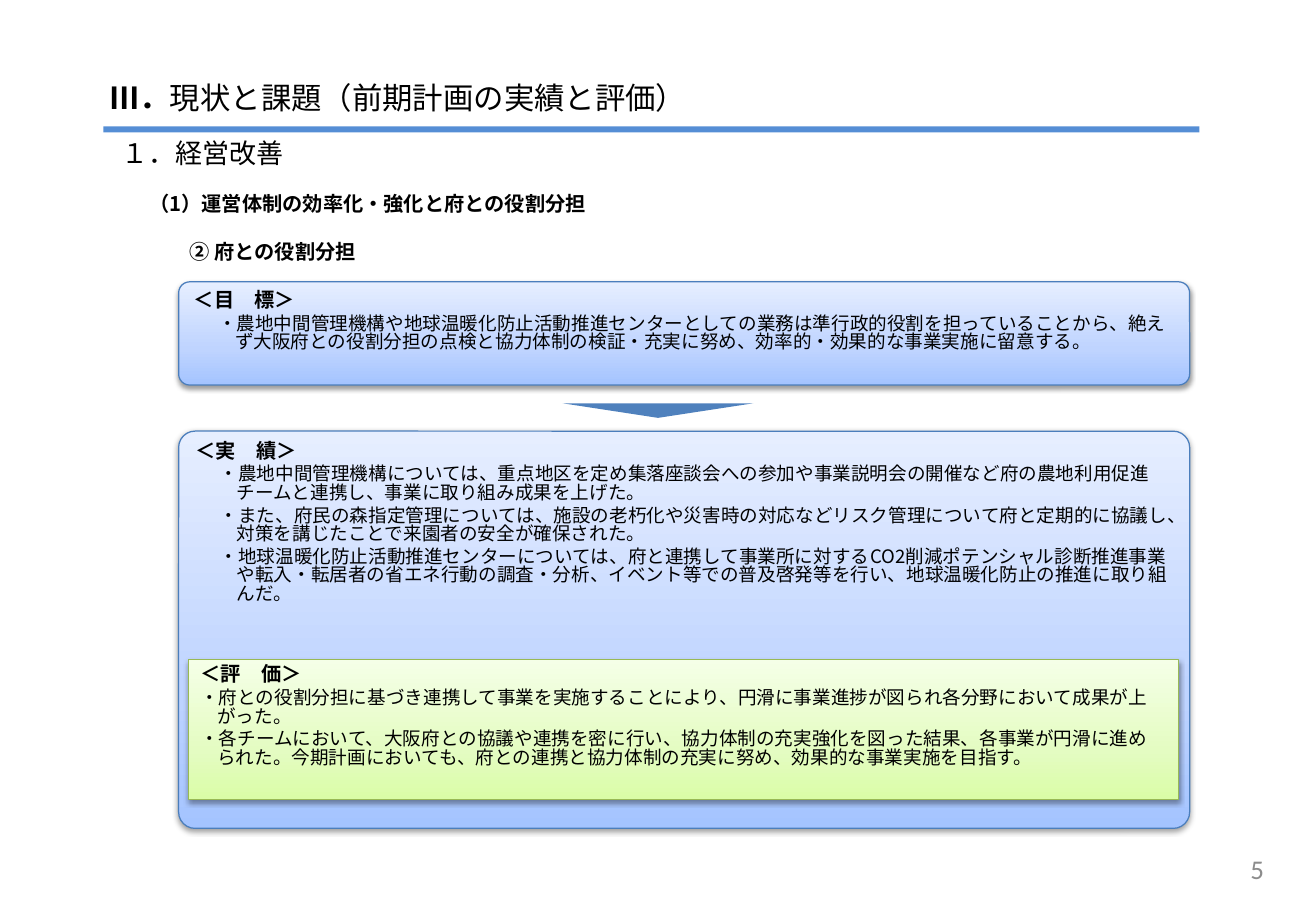
from lxml import etree
from pptx import Presentation
from pptx.dml.color import RGBColor
from pptx.enum.lang import MSO_LANGUAGE_ID
from pptx.enum.shapes import MSO_SHAPE
from pptx.enum.text import MSO_ANCHOR, PP_ALIGN
from pptx.oxml import parse_xml
from pptx.oxml.ns import qn
from pptx.util import Inches, Pt

RECT, ROUND, WEDGE = MSO_SHAPE.RECTANGLE, MSO_SHAPE.ROUNDED_RECTANGLE, MSO_SHAPE.ISOSCELES_TRIANGLE
TOP, MIDDLE = MSO_ANCHOR.TOP, MSO_ANCHOR.MIDDLE
LEFT, RIGHT = PP_ALIGN.LEFT, PP_ALIGN.RIGHT
JAPANESE = MSO_LANGUAGE_ID.JAPANESE
NS = "http://schemas.openxmlformats.org/drawingml/2006/main"

# Content
TITLE = [("Ⅲ．", True), ("現状と課題（前期計画の実績と評価）", False)]
SECTION = "１．経営改善"
TOPIC = "（1）運営体制の効率化・強化と府との役割分担"
ITEM = "② 府との役割分担"
PAGE = "5"
GOAL = ("＜目　標＞", [
    "・農地中間管理機構や地球温暖化防止活動推進センターとしての業務は準行政的役割を担っていることから、絶えず大阪府との役割分担の点検と協力体制の検証・充実に努め、効率的・効果的な事業実施に留意する。",
])
RESULT = ("＜実　績＞", [
    "・農地中間管理機構については、重点地区を定め集落座談会への参加や事業説明会の開催など府の農地利用促進チームと連携し、事業に取り組み成果を上げた。",
    "・また、府民の森指定管理については、施設の老朽化や災害時の対応などリスク管理について府と定期的に協議し、対策を講じたことで来園者の安全が確保された。",
    "・地球温暖化防止活動推進センターについては、府と連携して事業所に対するCO2削減ポテンシャル診断推進事業や転入・転居者の省エネ行動の調査・分析、イベント等での普及啓発等を行い、地球温暖化防止の推進に取り組んだ。",
])
REVIEW = ("＜評　価＞", [
    "・府との役割分担に基づき連携して事業を実施することにより、円滑に事業進捗が図られ各分野において成果が上がった。",
    "・各チームにおいて、大阪府との協議や連携を密に行い、協力体制の充実強化を図った結果、各事業が円滑に進められた。今期計画においても、府との連携と協力体制の充実に努め、効果的な事業実施を目指す。",
])

# Theme
THEME = {
    "font": "Noto Sans CJK JP", "number": "Calibri",
    "ink": "000000", "grey": "8C8C8C", "rule": "558ED5", "arrow": "4F81BD",
    "title": 18, "section": 16, "head": 12, "body": 11,
    "pitch": 0.84, "gap": 0.2,
    "blue": (("A4C4FF", "BFD4FF", "E6EEFF"), "4B7EBC"),
    "green": (("DAFDA7", "E4FCC2", "F5FFE7"), "98B955"),
}
HANG = 0.14

deck = Presentation()
deck.slide_width, deck.slide_height = Inches(10.83), Inches(7.5)
slide = deck.slides.add_slide(deck.slide_layouts[6])


def place(box):
    return [Inches(v) for v in box]


def write(para, runs, size, color="ink", font="font", pitch=THEME["pitch"]):
    para.line_spacing = pitch
    for text, bold in runs:
        run = para.add_run()
        run.text = text
        face = run.font
        face.size, face.bold = Pt(size), bold
        face.color.rgb = RGBColor.from_string(THEME[color])
        face.name, face.language_id = THEME[font], JAPANESE
        east = etree.SubElement(face._element, qn("a:ea"))
        east.set("typeface", THEME[font])


def label(box, runs, size, indent=0, anchor=TOP, align=LEFT, **style):
    frame = slide.shapes.add_textbox(*place(box)).text_frame
    frame.word_wrap, frame.vertical_anchor = True, anchor
    frame.margin_left = Inches(0.1 + indent)
    para = frame.paragraphs[0]
    para.alignment = align
    write(para, runs, size, **style)


def solid(kind, box, color, turn=0):
    shape = slide.shapes.add_shape(kind, *place(box))
    shape.shadow.inherit = False
    shape.fill.solid()
    shape.fill.fore_color.rgb = RGBColor.from_string(THEME[color])
    shape.line.fill.background()
    shape.rotation = turn


def panel(kind, box, tint, content, left, round_by=None, right=0.1):
    stops, edge = THEME[tint]
    shape = slide.shapes.add_shape(kind, *place(box))
    if round_by:
        shape.adjustments[0] = round_by
    shape.line.color.rgb = RGBColor.from_string(edge)
    shape.line.width = Pt(0.75)

    # Gradient and soft shadow
    marks = "".join(f'<a:gs pos="{pos}"><a:srgbClr val="{color}"/></a:gs>'
                    for pos, color in zip((0, 35000, 100000), stops))
    props = shape._element.spPr
    props.find(qn("a:prstGeom")).addnext(parse_xml(
        f'<a:gradFill xmlns:a="{NS}" rotWithShape="1"><a:gsLst>{marks}</a:gsLst>'
        '<a:lin ang="16200000" scaled="0"/></a:gradFill>'))
    props.append(parse_xml(
        f'<a:effectLst xmlns:a="{NS}"><a:outerShdw blurRad="{Pt(3.1)}" dist="{Pt(1.6)}" '
        'dir="5400000" rotWithShape="0"><a:srgbClr val="000000"><a:alpha val="38000"/>'
        '</a:srgbClr></a:outerShdw></a:effectLst>'))

    # Heading and hanging points
    head, points = content
    frame = shape.text_frame
    frame.word_wrap, frame.vertical_anchor = True, TOP
    frame.margin_right = Inches(right)
    for i, text in enumerate([head] + points):
        para = frame.add_paragraph() if i else frame.paragraphs[0]
        size = THEME["body" if i else "head"]
        para.alignment = LEFT
        para.space_before = Pt(size * THEME["gap"])
        if i:
            ppr = para._p.get_or_add_pPr()
            ppr.set("marL", str(Inches(left)))
            ppr.set("indent", str(Inches(-HANG)))
        write(para, [(text, i == 0)], size)


# Title and rule
label((0.8, 0.53, 5.28, 0.54), TITLE, THEME["title"], anchor=MIDDLE, pitch=1.0)
solid(RECT, (0.85, 1.04, 9.02, 0.05), "rule")

# Section headings
label((0.85, 1.12, 4.11, 0.37), [(SECTION, False)], THEME["section"], indent=0.05)
label((1.13, 1.56, 5.23, 0.3), [(TOPIC, True)], THEME["head"])
label((1.13, 1.95, 5.23, 0.3), [(ITEM, True)], THEME["head"], indent=0.33)

# Goal, arrow, results and review
panel(ROUND, (1.47, 2.32, 8.32, 0.85), "blue", GOAL, 0.34, 0.107)
solid(WEDGE, (4.63, 3.32, 1.57, 0.12), "arrow", 180)
panel(ROUND, (1.47, 3.55, 8.32, 3.27), "blue", RESULT, 0.34, 0.041)
panel(RECT, (1.55, 5.43, 8.15, 1.15), "green", REVIEW, HANG, right=0.13)

# Page number
label((7.97, 6.95, 2.53, 0.4), [(PAGE, False)], 16, anchor=MIDDLE, align=RIGHT,
      color="grey", font="number", pitch=1.0)

deck.save("out.pptx")
